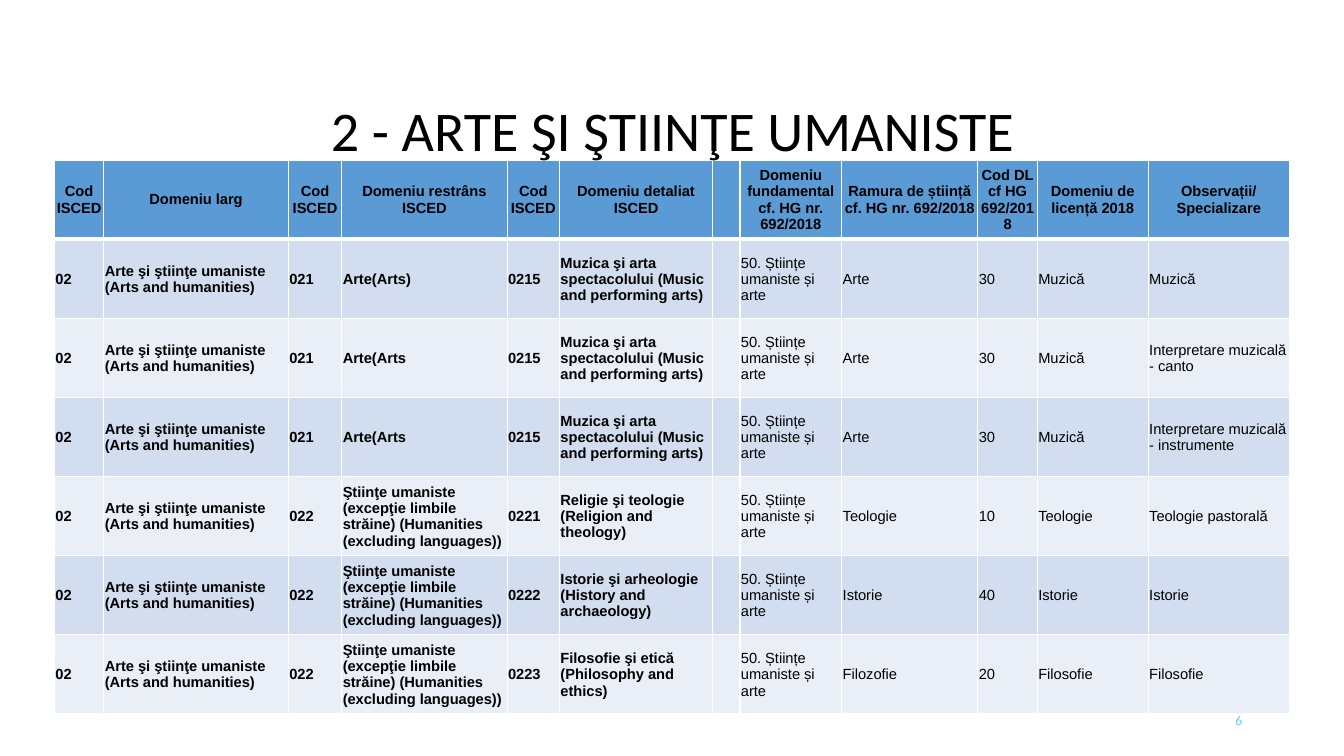
from dataclasses import dataclass

from lxml import etree
from pptx import Presentation, util as u
from pptx.dml.color import RGBColor
from pptx.enum import text
from pptx.oxml.ns import qn


@dataclass(frozen=True)
class Theme:
    black: str = "000000"
    white: str = "FFFFFF"
    header: str = "5B9BD5"
    bands: tuple = ("D2DEEF", "EAEFF7")
    number: str = "5FCBEF"
    title_font: str = "Calibri"
    table_font: str = "Arial"
    number_font: str = "Lato"
    title_size: float = 40
    table_size: float = 10.5
    number_size: float = 9


COLUMN_WIDTHS = [0.49, 1.83, 0.53, 1.64, 0.52, 1.52, 0.27, 1.01, 1.35, 0.59, 1.1, 1.4]
BOLD_COLUMNS = 6
TABLE_HEIGHT = 5.49

HEADER = ["Cod ISCED", "Domeniu larg", "Cod ISCED", "Domeniu restrâns ISCED",
          "Cod ISCED", "Domeniu detaliat ISCED", "",
          "Domeniu fundamental cf. HG nr. 692/2018", "Ramura de știință cf. HG nr. 692/2018",
          "Cod DL cf HG 692/2018", "Domeniu de licență 2018", "Observații/ Specializare"]

BROAD = ["02", "Arte şi ştiinţe umaniste (Arts and humanities)"]
FUNDAMENTAL = ["", "50. Științe umaniste și arte"]
HUMANITIES = "Ştiinţe umaniste (excepţie limbile străine) (Humanities (excluding languages))"
MUSIC = "Muzica şi arta spectacolului (Music and performing arts)"

# Narrow and detailed ISCED fields, then branch, code, degree field and specialisation
PROGRAMMES = [
    (["021", "Arte(Arts)", "0215", MUSIC],
     ["Arte", "30", "Muzică", "Muzică"]),
    (["021", "Arte(Arts", "0215", MUSIC],
     ["Arte", "30", "Muzică", "Interpretare muzicală - canto"]),
    (["021", "Arte(Arts", "0215", MUSIC],
     ["Arte", "30", "Muzică", "Interpretare muzicală - instrumente"]),
    (["022", HUMANITIES, "0221", "Religie şi teologie (Religion and theology)"],
     ["Teologie", "10", "Teologie", "Teologie pastorală"]),
    (["022", HUMANITIES, "0222", "Istorie şi arheologie (History and archaeology)"],
     ["Istorie", "40", "Istorie", "Istorie"]),
    (["022", HUMANITIES, "0223", "Filosofie şi etică (Philosophy and ethics)"],
     ["Filozofie", "20", "Filosofie", "Filosofie"]),
]


class SlideBuilder:
    def __init__(self, prs, theme):
        self.theme = theme
        self.s = prs.slides.add_slide(prs.slide_layouts[6])

    def format_paragraph(self, p, font, size, color, align, bold=False):
        p.alignment = align
        for r in p.runs:
            r.font.name = font
            r.font.size = u.Pt(size)
            r.font.bold = bold
            r.font.color.rgb = RGBColor.from_string(color)

    def text_box(self, content, left, top, width, height, font, size, color, align, spacing=1.0):
        sp = self.s.shapes.add_textbox(*map(u.Inches, (left, top, width, height)))
        tf = sp.text_frame
        tf.word_wrap = True
        tf.vertical_anchor = text.MSO_ANCHOR.MIDDLE
        tf.text = content
        p = tf.paragraphs[0]
        p.line_spacing = spacing
        self.format_paragraph(p, font, size, color, align)

    def header_borders(self, cell):
        """Thin white sides and a thick white rule below; borders must precede the fill."""
        tc_pr = cell._tc.get_or_add_tcPr()
        for i, (side, width) in enumerate((("L", 1), ("R", 1), ("T", 1), ("B", 3))):
            ln = etree.Element(qn(f"a:ln{side}"), w=str(u.Pt(width)))
            fill = etree.SubElement(ln, qn("a:solidFill"))
            etree.SubElement(fill, qn("a:srgbClr"), val=self.theme.white)
            tc_pr.insert(i, ln)

    def cell(self, cell, content, fill, align, bold, inset):
        cell.fill.solid()
        cell.fill.fore_color.rgb = RGBColor.from_string(fill)
        cell.vertical_anchor = text.MSO_ANCHOR.MIDDLE
        cell.margin_left = cell.margin_right = cell.margin_top = u.Inches(inset)
        cell.margin_bottom = 0
        cell.text = content
        self.format_paragraph(cell.text_frame.paragraphs[0], self.theme.table_font,
                              self.theme.table_size, self.theme.black, align, bold)

    def table(self, header, rows, left, top, widths, height):
        t = self.theme
        tbl = self.s.shapes.add_table(len(rows) + 1, len(header), u.Inches(left), u.Inches(top),
                                      u.Inches(sum(widths)), u.Inches(height)).table
        for column, width in zip(tbl.columns, widths):
            column.width = u.Inches(width)
        for c, label in enumerate(header):
            self.cell(tbl.cell(0, c), label, t.header, text.PP_ALIGN.CENTER, True, 0)
            self.header_borders(tbl.cell(0, c))
        for r, row in enumerate(rows):
            for c, value in enumerate(row):
                self.cell(tbl.cell(r + 1, c), value, t.bands[r % 2],
                          text.PP_ALIGN.LEFT, c < BOLD_COLUMNS, 0.01)


def main():
    prs = Presentation()
    prs.slide_width, prs.slide_height = u.Inches(13.33), u.Inches(7.5)
    theme = Theme()
    slide = SlideBuilder(prs, theme)
    rows = [BROAD + isced + FUNDAMENTAL + national for isced, national in PROGRAMMES]
    slide.table(HEADER, rows, 0.54, 1.59, COLUMN_WIDTHS, TABLE_HEIGHT)
    slide.text_box("6", 9.42, 6.95, 3, 0.4, theme.number_font, theme.number_size,
                   theme.number, text.PP_ALIGN.RIGHT)
    slide.text_box("2 - ARTE ŞI ŞTIINŢE UMANISTE", 0.92, 0.96, 11.5, 0.72, theme.title_font,
                   theme.title_size, theme.black, text.PP_ALIGN.CENTER, spacing=0.9)
    prs.save("out.pptx")


if __name__ == "__main__":
    main()
